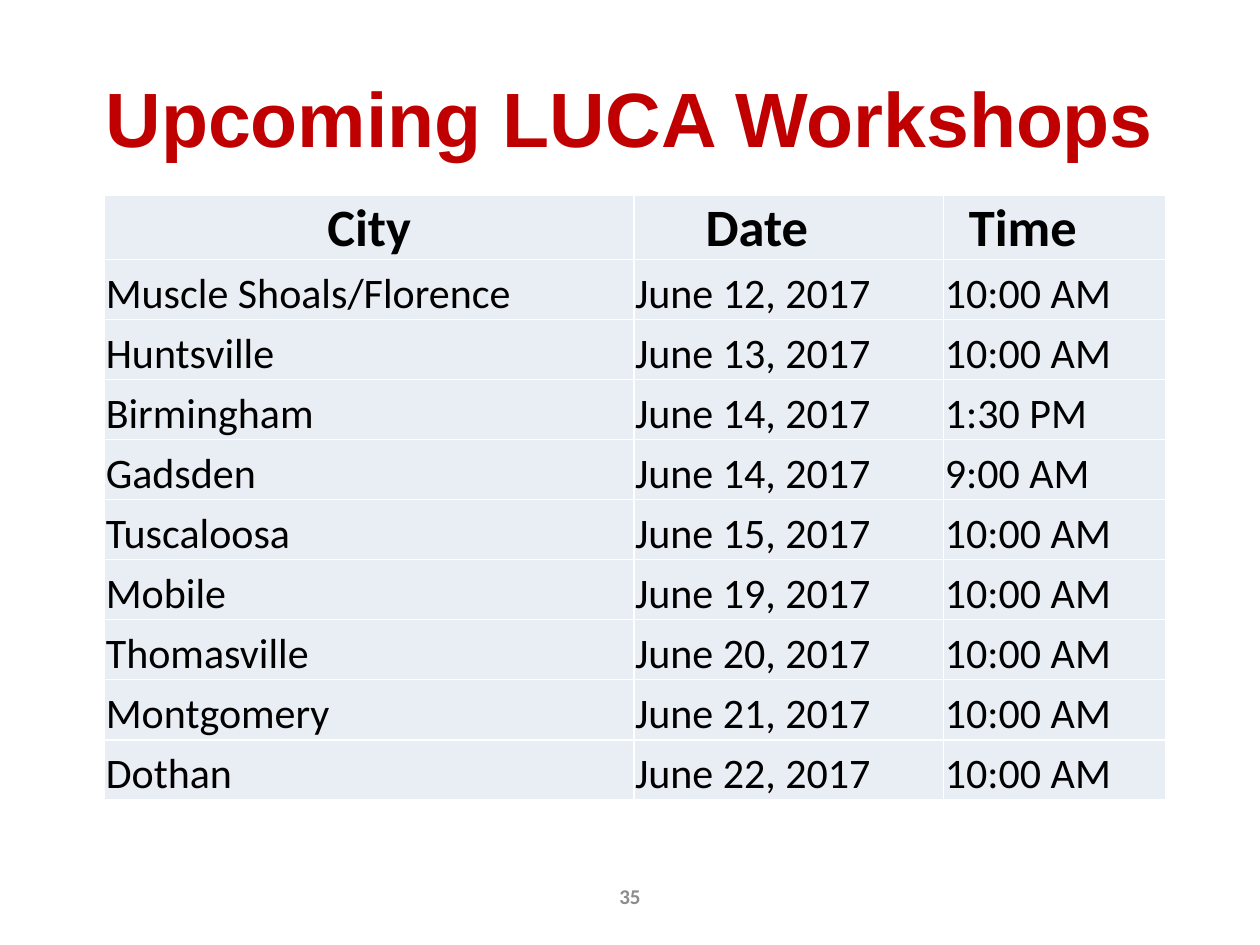
import dataclasses

import lxml.etree
import pptx
import pptx.dml.color
import pptx.enum.text
import pptx.oxml.ns
import pptx.util

Inches = pptx.util.Inches
Pt = pptx.util.Pt
ALIGN = pptx.enum.text.PP_ALIGN
ANCHOR = pptx.enum.text.MSO_ANCHOR


@dataclasses.dataclass(frozen=True)
class Theme:
    title_font: str = "Arial"
    body_font: str = "Calibri"
    title_color: str = "C00000"
    text_color: str = "000000"
    number_color: str = "8C8C8C"
    cell_color: str = "E9EDF4"
    border_color: str = "FFFFFF"
    title_size: int = 44
    header_size: int = 30
    body_size: int = 24
    number_size: int = 12


def write_text(frame, text, *, font, size, color, bold=False,
               align=ALIGN.LEFT, indent=0):
    """Fill a text frame with one formatted paragraph."""
    paragraph = frame.paragraphs[0]
    paragraph.alignment = align
    if indent:
        paragraph._p.get_or_add_pPr().set("marL", str(Inches(indent)))
    run = paragraph.add_run()
    run.text = text
    run.font.name = font
    run.font.size = Pt(size)
    run.font.bold = bold
    run.font.color.rgb = pptx.dml.color.RGBColor.from_string(color)


class SlideBuilder:
    def __init__(self, slide, theme):
        self.slide = slide
        self.theme = theme

    def title(self, text, left, top, width, height):
        heading = self.slide.shapes.title
        heading.left, heading.top = Inches(left), Inches(top)
        heading.width, heading.height = Inches(width), Inches(height)
        frame = heading.text_frame
        frame.auto_size = pptx.enum.text.MSO_AUTO_SIZE.NONE
        frame.vertical_anchor = ANCHOR.MIDDLE
        write_text(frame, text, font=self.theme.title_font,
                   size=self.theme.title_size, color=self.theme.title_color,
                   bold=True, align=ALIGN.CENTER)

    def page_number(self, text, left, top, width, height):
        footer = self.slide.shapes.add_textbox(
            Inches(left), Inches(top), Inches(width), Inches(height))
        frame = footer.text_frame
        frame.word_wrap = True
        frame.vertical_anchor = ANCHOR.MIDDLE
        write_text(frame, text, font=self.theme.body_font,
                   size=self.theme.number_size, color=self.theme.number_color,
                   bold=True, align=ALIGN.CENTER)

    def borders(self, cell):
        properties = cell._tc.get_or_add_tcPr()
        qn = pptx.oxml.ns.qn
        for side in ("a:lnL", "a:lnR", "a:lnT", "a:lnB"):
            line = lxml.etree.SubElement(properties, qn(side), w=str(Pt(1)))
            fill = lxml.etree.SubElement(line, qn("a:solidFill"))
            lxml.etree.SubElement(fill, qn("a:srgbClr"),
                                  val=self.theme.border_color)

    def cell(self, cell, text, **text_format):
        self.borders(cell)
        cell.fill.solid()
        cell.fill.fore_color.rgb = pptx.dml.color.RGBColor.from_string(
            self.theme.cell_color)
        cell.margin_left = cell.margin_right = cell.margin_top = Inches(0.01)
        cell.margin_bottom = 0
        cell.vertical_anchor = ANCHOR.BOTTOM
        write_text(cell.text_frame, text, font=self.theme.body_font,
                   color=self.theme.text_color, **text_format)

    def table(self, headers, rows, left, top, height, widths, header_height):
        schedule = self.slide.shapes.add_table(
            len(rows) + 1, len(widths), Inches(left), Inches(top),
            Inches(sum(widths)), Inches(height)).table
        for column, width in zip(schedule.columns, widths):
            column.width = Inches(width)
        row_height = (height - header_height) / len(rows)
        for index, row in enumerate(schedule.rows):
            row.height = Inches(row_height if index else header_height)

        for column, (label, placement) in enumerate(headers):
            self.cell(schedule.cell(0, column), label, bold=True,
                      size=self.theme.header_size, **placement)
        for index, values in enumerate(rows, start=1):
            for column, value in enumerate(values):
                self.cell(schedule.cell(index, column), value,
                          size=self.theme.body_size)


HEADERS = [
    ("City", {"align": ALIGN.CENTER}),
    ("Date", {"indent": 0.56}),
    ("Time", {"indent": 0.19}),
]
WORKSHOPS = [
    ("Muscle Shoals/Florence", "June 12, 2017", "10:00 AM"),
    ("Huntsville", "June 13, 2017", "10:00 AM"),
    ("Birmingham", "June 14, 2017", "1:30 PM"),
    ("Gadsden", "June 14, 2017", "9:00 AM"),
    ("Tuscaloosa", "June 15, 2017", "10:00 AM"),
    ("Mobile", "June 19, 2017", "10:00 AM"),
    ("Thomasville", "June 20, 2017", "10:00 AM"),
    ("Montgomery", "June 21, 2017", "10:00 AM"),
    ("Dothan", "June 22, 2017", "10:00 AM"),
]


def main():
    deck = pptx.Presentation()
    deck.slide_width, deck.slide_height = Inches(10), Inches(7.5)
    title_only = deck.slide_layouts.get_by_name("Title Only")
    builder = SlideBuilder(deck.slides.add_slide(title_only), Theme())

    # Heading and page number
    builder.title("Upcoming LUCA Workshops", 0.5, 0.3, 9, 1.25)
    builder.page_number("35", 0, 6.91, 10, 0.4)

    # Workshop schedule
    builder.table(HEADERS, WORKSHOPS, left=0.83, top=1.55, height=4.79,
                  widths=(4.2, 2.46, 1.76), header_height=0.5)

    deck.save("out.pptx")


if __name__ == "__main__":
    main()
